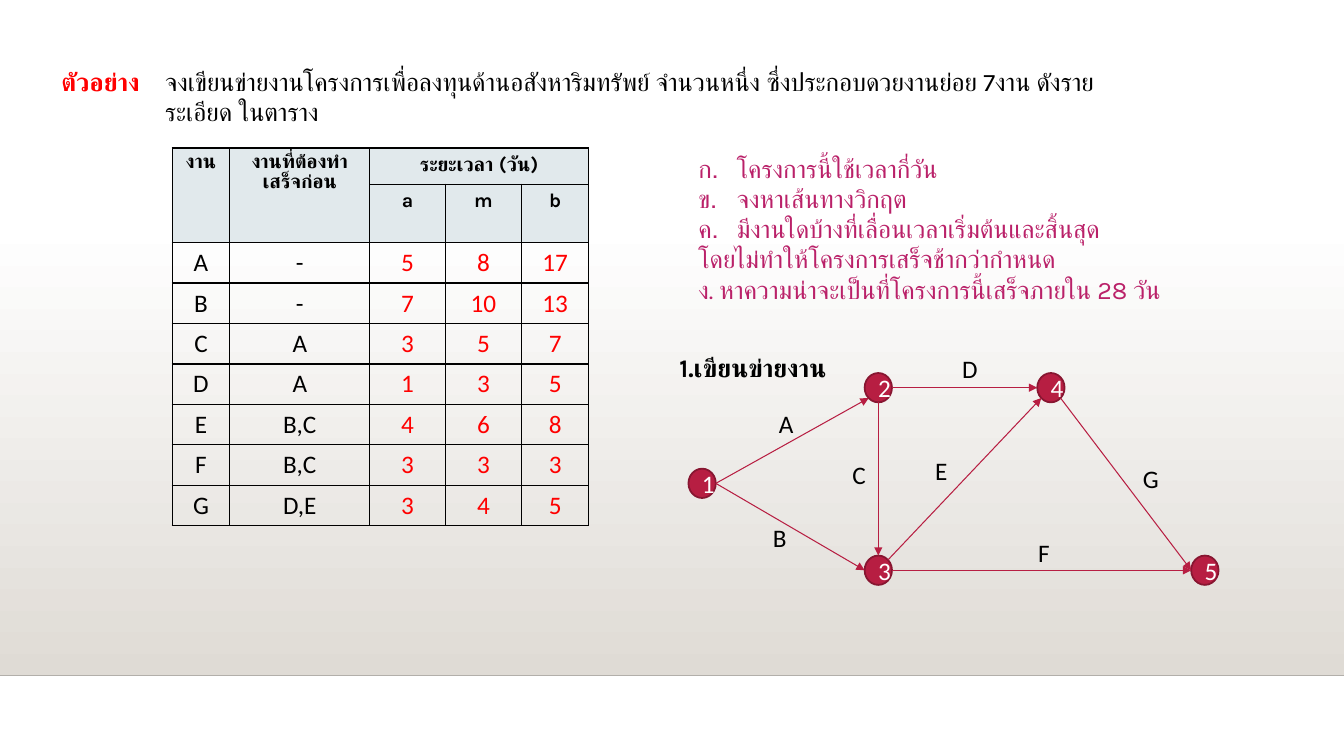
"""Build a slide with a task table, questions and a project network."""
from pptx import Presentation
from pptx import util as u
from pptx.dml.color import RGBColor
from pptx.enum import shapes, text
from pptx.oxml import ns, xmlchemy

Cm, Pt = u.Cm, u.Pt
COLORS = {
    "black": "000000", "white": "FFFFFF", "red": "FF0000", "question": "BA2169",
    "header": "E1E9EC", "node": "B71E42", "node_line": "871631",
    "floor": "DFDBD5", "floor_line": "B2AFAA",
}
THAI_FONT, LATIN_FONT = "Karla", "Calibri"
QUESTIONS = [
    "โครงการนี้ใช้เวลากี่วัน",
    "จงหาเส้นทางวิกฤต",
    "มีงานใดบ้างที่เลื่อนเวลาเริ่มต้นและสิ้นสุด",
    "โดยไม่ทำให้โครงการเสร็จช้ากว่ากำหนด",
    "ง. หาความน่าจะเป็นที่โครงการนี้เสร็จภายใน 28 วัน",
]
NUMBERED_QUESTIONS = 3
COLUMN_WIDTHS = [1.45, 3.53, 1.9, 1.93, 1.68]
ROW_HEIGHTS = [0.91, 1.47] + [1.02] * 7
TASK_ROWS = [
    ["งาน", "งานที่ต้องทำเสร็จก่อน", "ระยะเวลา (วัน)", "", ""],
    ["", "", "a", "m", "b"],
    ["A", "-", "5", "8", "17"],
    ["B", "-", "7", "10", "13"],
    ["C", "A", "3", "5", "7"],
    ["D", "A", "1", "3", "5"],
    ["E", "B,C", "4", "6", "8"],
    ["F", "B,C", "3", "3", "3"],
    ["G", "D,E", "3", "4", "5"],
]
HEADER_ROWS = 2
NODE_WIDTH, NODE_HEIGHT = 0.69, 0.74
NODES = {
    "1": (17.35, 11.81), "2": (21.79, 9.4), "3": (21.79, 14),
    "4": (26.14, 9.4), "5": (30.02, 14),
}
SITES = {
    "left": (0, 0.5), "right": (1, 0.5), "top": (0.5, 0), "bottom": (0.5, 1),
    "upper right": (0.85, 0.15), "lower left": (0.15, 0.85), "lower right": (0.85, 0.85),
}
TASKS = [
    ("A", "1", "right", "2", "lower left", 19.38, 10.16),
    ("B", "1", "right", "3", "left", 19.23, 13.03),
    ("C", "2", "bottom", "3", "top", 21.23, 11.46),
    ("D", "2", "right", "4", "left", 24, 8.79),
    ("E", "3", "upper right", "4", "lower left", 23.32, 11.35),
    ("F", "3", "right", "5", "left", 25.91, 13.41),
    ("G", "4", "lower right", "5", "left", 28.55, 11.56),
]


def color(name):
    """Return the named colour."""
    return RGBColor.from_string(COLORS[name])


def add_element(parent, tag, **attributes):
    """Append a drawing element to a parent and return it."""
    element = xmlchemy.OxmlElement(tag)
    for key, value in attributes.items():
        element.set(key, str(value))
    parent.append(element)
    return element


def format_runs(paragraph, font, color_name, size=18, bold=False):
    """Set the font of every run in a paragraph."""
    for run in paragraph.runs:
        run.font.name = font
        run.font.size = Pt(size)
        run.font.bold = bold
        run.font.color.rgb = color(color_name)


def add_text(slide, lines, left, top, width, height, font=THAI_FONT,
             color_name="black", bold=False):
    """Add a text box with one paragraph per line and return its paragraphs."""
    box = slide.shapes.add_textbox(Cm(left), Cm(top), Cm(width), Cm(height))
    box.text_frame.word_wrap = True
    box.text_frame.text = "\n".join(lines)
    for paragraph in box.text_frame.paragraphs:
        format_runs(paragraph, font, color_name, bold=bold)
    return box.text_frame.paragraphs


def add_line(slide, start, end, color_name, width, arrow=False):
    """Add a straight line, with an arrowhead at its end if asked."""
    points = [Cm(value) for value in (*start, *end)]
    line = slide.shapes.add_connector(shapes.MSO_CONNECTOR.STRAIGHT, *points)
    line.line.color.rgb = color(color_name)
    line.line.width = Pt(width)
    if arrow:
        add_element(line.line._get_or_add_ln(), "a:tailEnd", type="triangle")
    add_element(line._element.spPr, "a:effectLst")


def add_floor(slide):
    """Add the shaded band and the line below it."""
    floor = slide.shapes.add_shape(
        shapes.MSO_SHAPE.RECTANGLE, 0, Cm(5.61), Cm(33.87), Cm(11.41))
    floor.shadow.inherit = False
    floor.line.fill.background()
    floor.fill.gradient()
    floor.fill.gradient_angle = 270
    for stop, name in zip(floor.fill.gradient_stops, ("white", "floor")):
        stop.color.rgb = color(name)
    add_line(slide, (0, 17.02), (33.87, 17.02), "floor_line", 1)


def add_borders(cell):
    """Give a cell thin black borders."""
    properties = cell._tc.get_or_add_tcPr()
    for side in ("L", "R", "T", "B"):
        border = add_element(properties, f"a:ln{side}", w=Pt(1))
        fill = add_element(border, "a:solidFill")
        add_element(fill, "a:srgbClr", val=COLORS["black"])


def format_cell(cell, row, column):
    """Set borders, fill and font by the place of a cell."""
    add_borders(cell)
    paragraph = cell.text_frame.paragraphs[0]
    paragraph.alignment = text.PP_ALIGN.CENTER
    if row < HEADER_ROWS:
        cell.fill.solid()
        cell.fill.fore_color.rgb = color("header")
        format_runs(paragraph, THAI_FONT, "black", 14, True)
    else:
        cell.fill.background()
        format_runs(paragraph, LATIN_FONT, "black" if column < 2 else "red")


def add_task_table(slide):
    """Add the table of tasks, predecessors and durations."""
    frame = slide.shapes.add_table(
        len(ROW_HEIGHTS), len(COLUMN_WIDTHS), Cm(4.34), Cm(3.73),
        Cm(sum(COLUMN_WIDTHS)), Cm(sum(ROW_HEIGHTS)))
    table = frame.table
    table.first_row = table.horz_banding = False
    for column, width in zip(table.columns, COLUMN_WIDTHS):
        column.width = Cm(width)
    for row, height in zip(table.rows, ROW_HEIGHTS):
        row.height = Cm(height)
    for row, values in enumerate(TASK_ROWS):
        for column, value in enumerate(values):
            cell = table.cell(row, column)
            cell.text_frame.text = value
            format_cell(cell, row, column)
    for column in (0, 1):
        table.cell(0, column).merge(table.cell(1, column))
    table.cell(0, 2).merge(table.cell(0, 4))


def add_questions(slide):
    """Add the questions, the first ones numbered with Thai letters."""
    paragraphs = add_text(slide, QUESTIONS, 17.35, 3.73, 13.67, 4.11, color_name="question")
    for paragraph in paragraphs[:NUMBERED_QUESTIONS]:
        properties = paragraph._p.get_or_add_pPr()
        properties.set("marL", str(Cm(0.97)))
        properties.set("indent", str(-Cm(0.97)))
        add_element(properties, "a:buAutoNum", type="thaiAlphaPeriod")


def add_node(slide, label, left, top):
    """Add a numbered event circle."""
    node = slide.shapes.add_shape(
        shapes.MSO_SHAPE.OVAL, Cm(left), Cm(top), Cm(NODE_WIDTH), Cm(NODE_HEIGHT))
    node.shadow.inherit = False
    node.fill.solid()
    node.fill.fore_color.rgb = color("node")
    node.line.color.rgb = color("node_line")
    node.line.width = Pt(1.25)
    node.text_frame.text = label
    paragraph = node.text_frame.paragraphs[0]
    paragraph.alignment = text.PP_ALIGN.CENTER
    format_runs(paragraph, LATIN_FONT, "white")


def site_point(node, site):
    """Return the point of a named site on a node."""
    (left, top), (across, down) = NODES[node], SITES[site]
    return left + across * NODE_WIDTH, top + down * NODE_HEIGHT


def add_network(slide):
    """Add the event circles, task arrows and task letters."""
    for label, (left, top) in NODES.items():
        add_node(slide, label, left, top)
    for task, start, start_site, end, end_site, left, top in TASKS:
        add_line(slide, site_point(start, start_site), site_point(end, end_site),
                 "node", 0.75, arrow=True)
        add_text(slide, [task], left, top, 0.61, 0.69, font=LATIN_FONT)


def main():
    """Build and save the presentation."""
    presentation = Presentation()
    presentation.slide_width, presentation.slide_height = Cm(33.87), Cm(19.05)
    slide = presentation.slides.add_slide(presentation.slide_layouts[6])
    add_floor(slide)
    add_text(slide, ["ตัวอย่าง"], 1.3, 1.55, 2.82, 1.02, color_name="red", bold=True)
    add_text(slide, [
        "จงเขียนข่ายงานโครงการเพื่อลงทุนด้านอสังหาริมทรัพย์ จำนวนหนึ่ง ซึ่งประกอบดวยงานย่อย 7งาน ดังราย",
        "ระเอียด ในตาราง"], 3.91, 1.55, 27.53, 1.8)
    add_task_table(slide)
    add_questions(slide)
    add_network(slide)
    add_text(slide, ["1.เขียนข่ายงาน"], 16.87, 8.76, 5, 1.02, bold=True)
    presentation.save("out.pptx")


if __name__ == "__main__":
    main()
